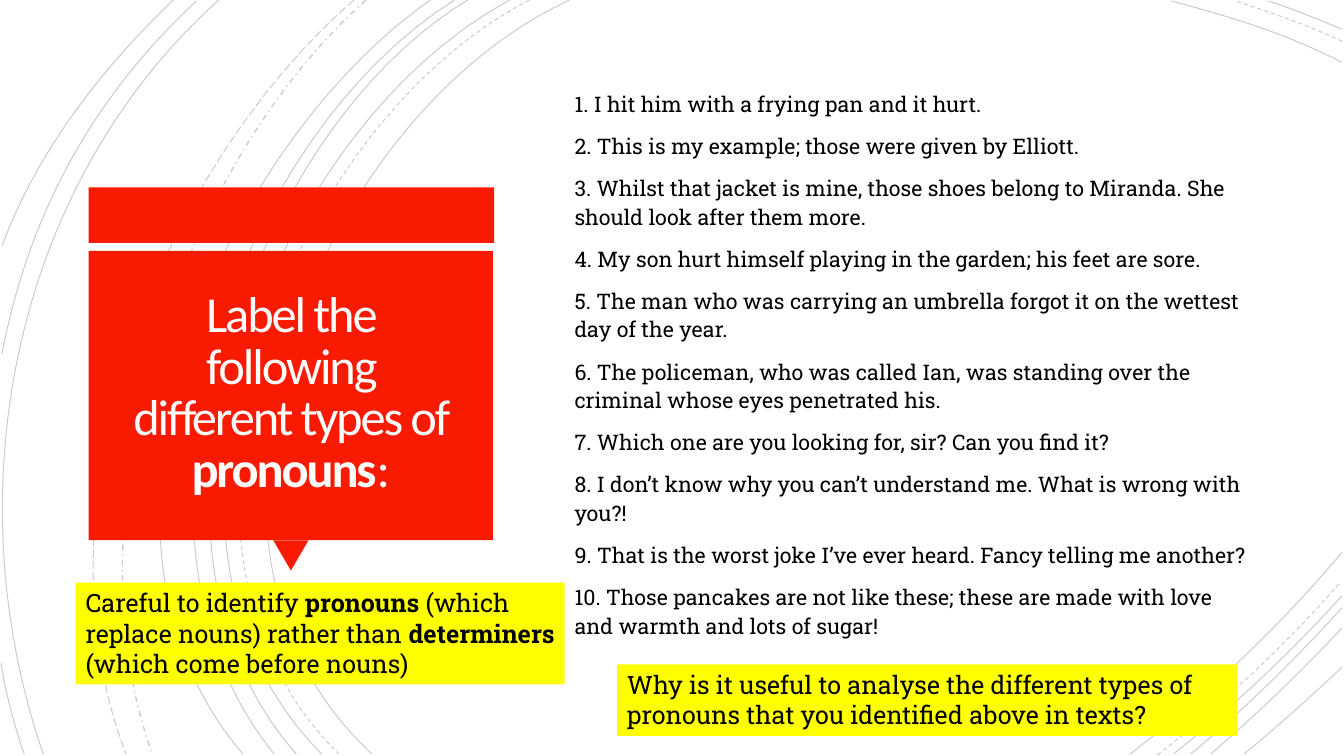
from lxml import etree
from pptx import Presentation
from pptx.dml.color import RGBColor
from pptx.enum import dml, shapes, text
from pptx.oxml import ns
from pptx.util import Inches, Pt

# Content
TITLE = [("Label the following different types of ", False), ("pronouns", True), (":", False)]
SENTENCES = [
    "I hit him with a frying pan and it hurt.",
    "This is my example; those were given by Elliott.",
    "Whilst that jacket is mine, those shoes belong to Miranda. She should look after them more.",
    "My son hurt himself playing in the garden; his feet are sore.",
    "The man who was carrying an umbrella forgot it on the wettest day of the year.",
    "The policeman, who was called Ian, was standing over the criminal whose eyes penetrated his.",
    "Which one are you looking for, sir? Can you find it?",
    "I don’t know why you can’t understand me. What is wrong with you?!",
    "That is the worst joke I’ve ever heard. Fancy telling me another?",
    "Those pancakes are not like these; these are made with love and warmth and lots of sugar!",
]
NOTES = [  # place, runs as (words, bold)
    ((6.12, 6.59, 6.15, 0.71),
     [("Why is it useful to analyse the different types of pronouns that you identified above in texts?", False)]),
    ((0.75, 5.78, 4.85, 1.01),
     [("Careful to identify ", False), ("pronouns ", True), ("(which replace nouns) rather than ", False),
      ("determiners ", True), ("(which come before nouns)", False)]),
]
COLORS = {"red": "F81B02", "yellow": "FFFF00", "white": "FFFEFF", "black": "000000"}
HEADING_FONT, BODY_FONT = "Calibri", "Roboto Slab"

# Background arcs: Bezier start, two controls, end, grouped by dash style and width
ARCS = {
    ("SOLID", 0.75): [
        ((5.65, 0), (3.15, 1.15), (1.43, 5.4), (3.69, 7.48)),
        ((13.31, 0.62), (12.78, 0.34), (12.18, 0.16), (11.62, 0.01)),
        ((11.21, 7.48), (11.97, 6.9), (12.69, 6.22), (13.31, 5.48)),
        ((5.06, 0), (2.7, 1.27), (1.1, 5.37), (3.19, 7.48)),
        ((13.31, 0.29), (13.07, 0.19), (12.83, 0.09), (12.58, 0.01)),
        ((11.64, 7.48), (12.23, 7.01), (12.8, 6.48), (13.31, 5.91)),
        ((4.64, 0), (2.44, 1.33), (1.1, 5.41), (2.94, 7.48)),
        ((11.81, 7.48), (12.34, 7.04), (12.84, 6.55), (13.31, 6.03)),
        ((4.51, 0), (2.31, 1.38), (0.97, 5.33), (2.72, 7.48)),
        ((12.01, 7.48), (12.46, 7.09), (12.9, 6.67), (13.31, 6.23)),
        ((4.27, 0), (2.17, 1.47), (0.53, 5.29), (2.41, 7.48)),
        ((12.34, 7.48), (12.67, 7.21), (12.99, 6.92), (13.31, 6.62)),
        ((2.17, 0), (0.11, 1.85), (-0.46, 4.9), (0.43, 7.48)),
        ((1.95, 0.01), (0.92, 0.96), (0.28, 2.14), (0.02, 3.51)),
        ((0.01, 6.58), (0.06, 6.89), (0.14, 7.19), (0.24, 7.48)),
        ((1.72, 0), (1, 0.69), (0.37, 1.5), (0.02, 2.44)),
    ],
    ("DASH", 0.75): [
        ((5.25, 0), (2.85, 1.25), (1.23, 5.37), (3.36, 7.48)),
        ((13.31, 0.41), (12.97, 0.25), (12.6, 0.12), (12.25, 0.01)),
        ((11.48, 7.49), (12.13, 6.98), (12.75, 6.4), (13.3, 5.77)),
    ],
    ("DASH_DOT", 1): [((3.63, 0), (1.76, 1.66), (0.65, 5.09), (1.51, 7.48))],
    ("LONG_DASH", 0.75): [((3.51, 0), (1.57, 1.69), (0.29, 4.99), (1.25, 7.48))],
}
ARC_OPACITY = 20

deck = Presentation()
deck.slide_width, deck.slide_height = Inches(13.33), Inches(7.5)
page = deck.slides.add_slide(deck.slide_layouts[6])


def color(name):
    return RGBColor.from_string(COLORS[name])


def add_arc(arc, dash, width):
    start, *rest = [(Inches(x), Inches(y)) for x, y in arc]
    builder = page.shapes.build_freeform(*start)
    builder.add_line_segments(rest, close=False)
    curve = builder.convert_to_shape()
    # Join the three straight segments into one cubic Bezier
    outline = curve._element.find(".//" + ns.qn("a:path"))
    segments = outline.findall(ns.qn("a:lnTo"))
    bezier = etree.SubElement(outline, ns.qn("a:cubicBezTo"))
    for segment in segments:
        bezier.append(segment[0])
        outline.remove(segment)
    curve.shadow.inherit = False
    curve.fill.background()
    curve.line.color.rgb = color("black")
    curve.line.width = Pt(width)
    curve.line.dash_style = dml.MSO_LINE[dash]
    tint = curve.line._ln.find(".//" + ns.qn("a:srgbClr"))
    etree.SubElement(tint, ns.qn("a:alpha"), val=str(ARC_OPACITY * 1000))


def add_block(kind, place, fill):
    block = page.shapes.add_shape(kind, *map(Inches, place))
    block.shadow.inherit = False
    block.fill.solid()
    block.fill.fore_color.rgb = color(fill)
    block.line.fill.background()
    return block


def set_font(para, name, size, tone):
    para.font.name, para.font.size = name, Pt(size)
    para.font.color.rgb = color(tone)


def add_spans(para, runs):
    for words, bold in runs:
        span = para.add_run()
        span.text, span.font.bold = words, bold


# Background
for (dash, width), arcs in ARCS.items():
    for arc in arcs:
        add_arc(arc, dash, width)

# Red title panel with its pointer
RECTANGLE = shapes.MSO_SHAPE.RECTANGLE
add_block(RECTANGLE, (0.88, 1.86, 4.02, 0.55), "red")
pointer = add_block(shapes.MSO_SHAPE.ISOSCELES_TRIANGLE, (2.71, 5.36, 0.35, 0.3), "red")
pointer.rotation = 180
add_block(RECTANGLE, (0.88, 2.49, 4.01, 2.87), "red")

# Title
frame = page.shapes.add_textbox(*map(Inches, (0.97, 2.57, 3.83, 2.69))).text_frame
frame.word_wrap = True
frame.vertical_anchor = text.MSO_ANCHOR.MIDDLE
frame.margin_left = frame.margin_right = frame.margin_top = frame.margin_bottom = Inches(0.25)
para = frame.paragraphs[0]
para.alignment, para.line_spacing = text.PP_ALIGN.CENTER, 0.85
set_font(para, HEADING_FONT, 36, "white")
add_spans(para, TITLE)
for span in para.runs:
    span._r.get_or_add_rPr().set("spc", "-150")

# Numbered sentences
frame = page.shapes.add_textbox(*map(Inches, (5.6, 0.88, 6.87, 5.74))).text_frame
frame.word_wrap = True
frame.vertical_anchor = text.MSO_ANCHOR.MIDDLE
frame.margin_top, frame.margin_bottom = 0, Inches(0.29)
for number, sentence in enumerate(SENTENCES, 1):
    para = frame.paragraphs[0] if number == 1 else frame.add_paragraph()
    para.text = f"{number}. {sentence}"
    para.line_spacing, para.space_before = 1.1, Pt(10)
    set_font(para, BODY_FONT, 15.3, "black")

# Yellow notes
for place, runs in NOTES:
    frame = add_block(RECTANGLE, place, "yellow").text_frame
    frame.word_wrap = True
    frame.vertical_anchor = text.MSO_ANCHOR.TOP
    frame.margin_right = Inches(0.08)
    para = frame.paragraphs[0]
    para.alignment = text.PP_ALIGN.LEFT
    set_font(para, BODY_FONT, 18, "black")
    add_spans(para, runs)

deck.save("out.pptx")
